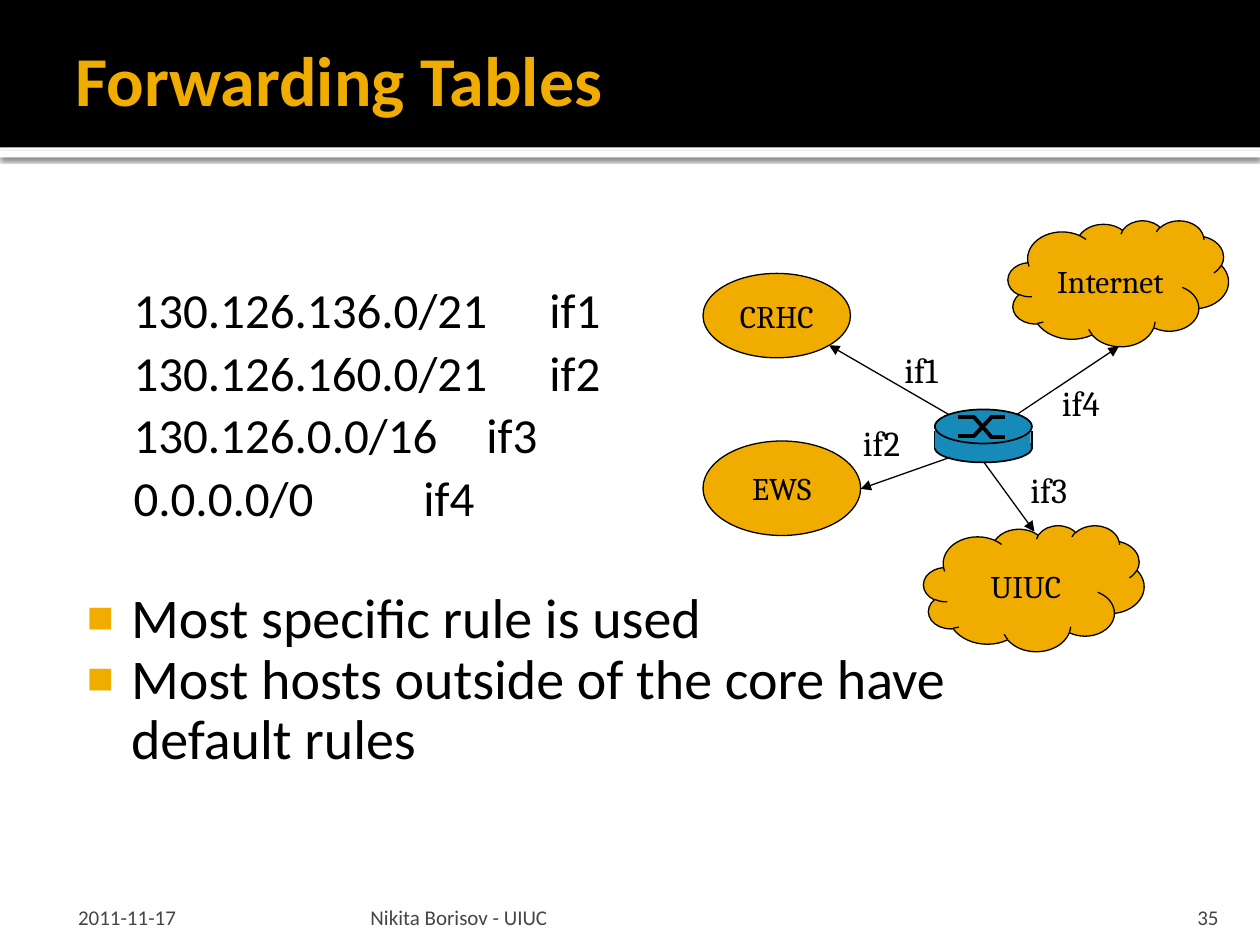
from dataclasses import dataclass

import pptx
import pptx.dml.color
import pptx.enum.shapes
import pptx.enum.text
import pptx.oxml
import pptx.oxml.ns
import pptx.util
from lxml import etree

Inches = pptx.util.Inches
Pt = pptx.util.Pt
Shapes = pptx.enum.shapes.MSO_SHAPE
Align = pptx.enum.text.PP_ALIGN
Anchor = pptx.enum.text.MSO_ANCHOR
AutoSize = pptx.enum.text.MSO_AUTO_SIZE
qn = pptx.oxml.ns.qn


@dataclass(frozen=True)
class Theme:
    sans: str = "Calibri"
    serif: str = "Cambria"
    gold: str = "F0AD00"
    blue: str = "168BBA"
    black: str = "000000"
    white: str = "FFFFFF"
    grey: str = "454545"
    title_size: float = 40
    bullet_size: float = 32
    row_size: float = 28
    label_size: float = 20
    node_size: float = 18
    footer_size: float = 12


@dataclass(frozen=True)
class Network:
    name: str
    outline: int
    box: tuple[float, float, float, float]


@dataclass(frozen=True)
class Link:
    name: str
    start: tuple[float, float]
    end: tuple[float, float]
    label_at: tuple[float, float]


@dataclass(frozen=True)
class Footer:
    text: str
    box: tuple[float, float, float, float]
    left_inset: float
    right_inset: float
    align: int


THEME = Theme()
ROUTES = ["130.126.136.0/21\tif1", "130.126.160.0/21\tif2",
          "130.126.0.0/16\tif3", "0.0.0.0/0\t\tif4"]
RULES = ["Most specific rule is used",
         "Most hosts outside of the core have default rules"]
NETWORKS = [
    Network("CRHC", Shapes.OVAL, (5.58, 2.17, 1.17, 0.67)),
    Network("EWS", Shapes.OVAL, (5.58, 3.5, 1.25, 0.75)),
    Network("UIUC", Shapes.CLOUD, (7.33, 4.17, 1.75, 1)),
    Network("Internet", Shapes.CLOUD, (8, 1.75, 1.75, 1)),
]
LINKS = [
    Link("if1", (7.53, 3.29), (6.58, 2.74), (7.08, 2.72)),
    Link("if2", (7.54, 3.63), (6.83, 3.88), (6.75, 3.3)),
    Link("if3", (7.81, 3.67), (8.21, 4.22), (8.08, 3.67)),
    Link("if4", (8.07, 3.29), (8.88, 2.75), (8.33, 2.98)),
]
FOOTERS = [
    Footer("2011-11-17", (0.5, 7.08, 2.33, 0.3), 0.12, 0.05, Align.LEFT),
    Footer("Nikita Borisov - UIUC", (2.89, 7.08, 6.02, 0.3), 0.05, 0.05, Align.LEFT),
    Footer("35", (8.97, 7.08, 0.8, 0.3), 0.1, 0.1, Align.RIGHT),
]


def rgb(code: str):
    return pptx.dml.color.RGBColor.from_string(code)


def place(shape, box) -> None:
    shape.left, shape.top, shape.width, shape.height = map(Inches, box)


def set_insets(frame, left, top, right, bottom) -> None:
    frame.margin_left, frame.margin_top = Inches(left), Inches(top)
    frame.margin_right, frame.margin_bottom = Inches(right), Inches(bottom)


def style(para, font: str, size: float, color: str, bold: bool = False) -> None:
    for span in para.runs:
        span.font.name, span.font.size, span.font.bold = font, Pt(size), bold
        span.font.color.rgb = rgb(color)


def add_solid(shapes, kind, box, fill: str, line_width: float = 0):
    shape = shapes.add_shape(kind, *map(Inches, box))
    shape.shadow.inherit = False
    shape.fill.solid()
    shape.fill.fore_color.rgb = rgb(fill)
    if line_width:
        shape.line.color.rgb = rgb(THEME.black)
        shape.line.width = Pt(line_width)
    else:
        shape.line.fill.background()
    return shape


def add_line(shapes, start, end, width: float, arrow: bool = False) -> None:
    line = shapes.add_connector(pptx.enum.shapes.MSO_CONNECTOR.STRAIGHT,
                                *map(Inches, start + end))
    line.line.color.rgb = rgb(THEME.black)
    line.line.width = Pt(width)
    if arrow:
        etree.SubElement(line.line._get_or_add_ln(), qn("a:tailEnd"), type="triangle")
    etree.SubElement(line.element.spPr, qn("a:effectLst"))


def add_header(page) -> None:
    title = page.shapes.title
    strip = add_solid(page.shapes, Shapes.RECTANGLE, (0, 1.2, 10, 0.05), THEME.white)
    effects = strip.element.spPr.find(qn("a:effectLst"))
    shadow = etree.SubElement(effects, qn("a:outerShdw"), blurRad=str(Pt(2.5)),
                              dist=str(Pt(0.8)), dir="5400000", rotWithShape="0")
    tint = etree.SubElement(shadow, qn("a:srgbClr"), val=THEME.black)
    etree.SubElement(tint, qn("a:alpha"), val="60000")
    band = add_solid(page.shapes, Shapes.RECTANGLE, (0, 0, 10, 1.17), THEME.black)
    for backdrop in (strip, band):
        title.element.addprevious(backdrop.element)

    place(title, (0.5, 0.08, 9, 1.08))
    frame = title.text_frame
    frame.text = "Forwarding Tables"
    frame.auto_size, frame.vertical_anchor = AutoSize.NONE, Anchor.MIDDLE
    set_insets(frame, 0.1, 0.05, 0.05, 0.05)
    frame.paragraphs[0].alignment = Align.LEFT
    style(frame.paragraphs[0], THEME.sans, THEME.title_size, THEME.gold, True)


def set_bullet(para, margin: float, indent: float, char: str = "") -> None:
    props = para._p.get_or_add_pPr()
    props.set("marL", str(Inches(margin)))
    props.set("indent", str(Inches(indent)))
    if char:
        color = etree.SubElement(props, qn("a:buClr"))
        etree.SubElement(color, qn("a:srgbClr"), val=THEME.gold)
        etree.SubElement(props, qn("a:buSzPct"), val="80000")
        etree.SubElement(props, qn("a:buChar"), char=char)
    else:
        etree.SubElement(props, qn("a:buNone"))


def fill_body(body) -> None:
    place(body, (0.5, 2.17, 8.38, 4.5))
    frame = body.text_frame
    frame.text = "\n".join(ROUTES + RULES)
    frame.auto_size, frame.vertical_anchor = AutoSize.NONE, Anchor.TOP
    set_insets(frame, 0.06, 0.1, 0.1, 0.05)
    for index, para in enumerate(frame.paragraphs):
        para.line_spacing = 0.9
        if index < len(ROUTES):
            para.level, para.space_before = 1, Pt(5.6)
            set_bullet(para, 0.8, -0.3)
            style(para, THEME.sans, THEME.row_size, THEME.black)
        else:
            para.space_before = Pt(36 if index == len(ROUTES) else 0)
            set_bullet(para, 0.48, -0.35, "■")
            style(para, THEME.sans, THEME.bullet_size, THEME.black)


def add_router(page) -> None:
    parts = page.shapes.add_group_shape().shapes
    add_solid(parts, Shapes.OVAL, (7.42, 3.44, 0.77, 0.23), THEME.blue, 1)
    for side in (7.42, 8.19):
        add_line(parts, (side, 3.42), (side, 3.56), 1)
    add_solid(parts, Shapes.RECTANGLE, (7.42, 3.42, 0.76, 0.14), THEME.blue)
    add_solid(parts, Shapes.OVAL, (7.42, 3.25, 0.77, 0.27), THEME.blue, 1)
    for near, far in ((3.31, 3.47), (3.46, 3.31)):
        add_line(parts, (7.6, near), (7.74, near), 2.25)
        add_line(parts, (7.86, far), (7.98, far), 2.25)
        add_line(parts, (7.73, near), (7.87, far), 2.25)


def add_network(page, network: Network) -> None:
    shape = add_solid(page.shapes, network.outline, network.box, THEME.gold, 0.75)
    frame = shape.text_frame
    frame.text = network.name
    frame.word_wrap, frame.vertical_anchor = False, Anchor.MIDDLE
    frame.paragraphs[0].alignment = Align.CENTER
    style(frame.paragraphs[0], THEME.serif, THEME.node_size, THEME.black)


def add_link_label(page, link: Link) -> None:
    frame = page.shapes.add_textbox(*map(Inches, link.label_at + (0.51, 0.43))).text_frame
    frame.text = link.name
    frame.word_wrap, frame.auto_size = False, AutoSize.SHAPE_TO_FIT_TEXT
    style(frame.paragraphs[0], THEME.serif, THEME.label_size, THEME.black)


def add_footer(page, footer: Footer) -> None:
    frame = page.shapes.add_textbox(*map(Inches, footer.box)).text_frame
    frame.text = footer.text
    frame.word_wrap, frame.vertical_anchor = True, Anchor.BOTTOM
    set_insets(frame, footer.left_inset, 0.05, footer.right_inset, 0)
    frame.paragraphs[0].alignment = footer.align
    style(frame.paragraphs[0], THEME.sans, THEME.footer_size, THEME.grey)


def main() -> None:
    deck = pptx.Presentation()
    deck.slide_width, deck.slide_height = Inches(10), Inches(7.5)
    page = deck.slides.add_slide(deck.slide_layouts[1])
    add_header(page)
    fill_body(page.placeholders[1])
    add_router(page)
    for network in NETWORKS:
        add_network(page, network)
    for link in LINKS:
        add_line(page.shapes, link.start, link.end, 0.75, arrow=True)
        add_link_label(page, link)
    for footer in FOOTERS:
        add_footer(page, footer)
    deck.save("out.pptx")


if __name__ == "__main__":
    main()
